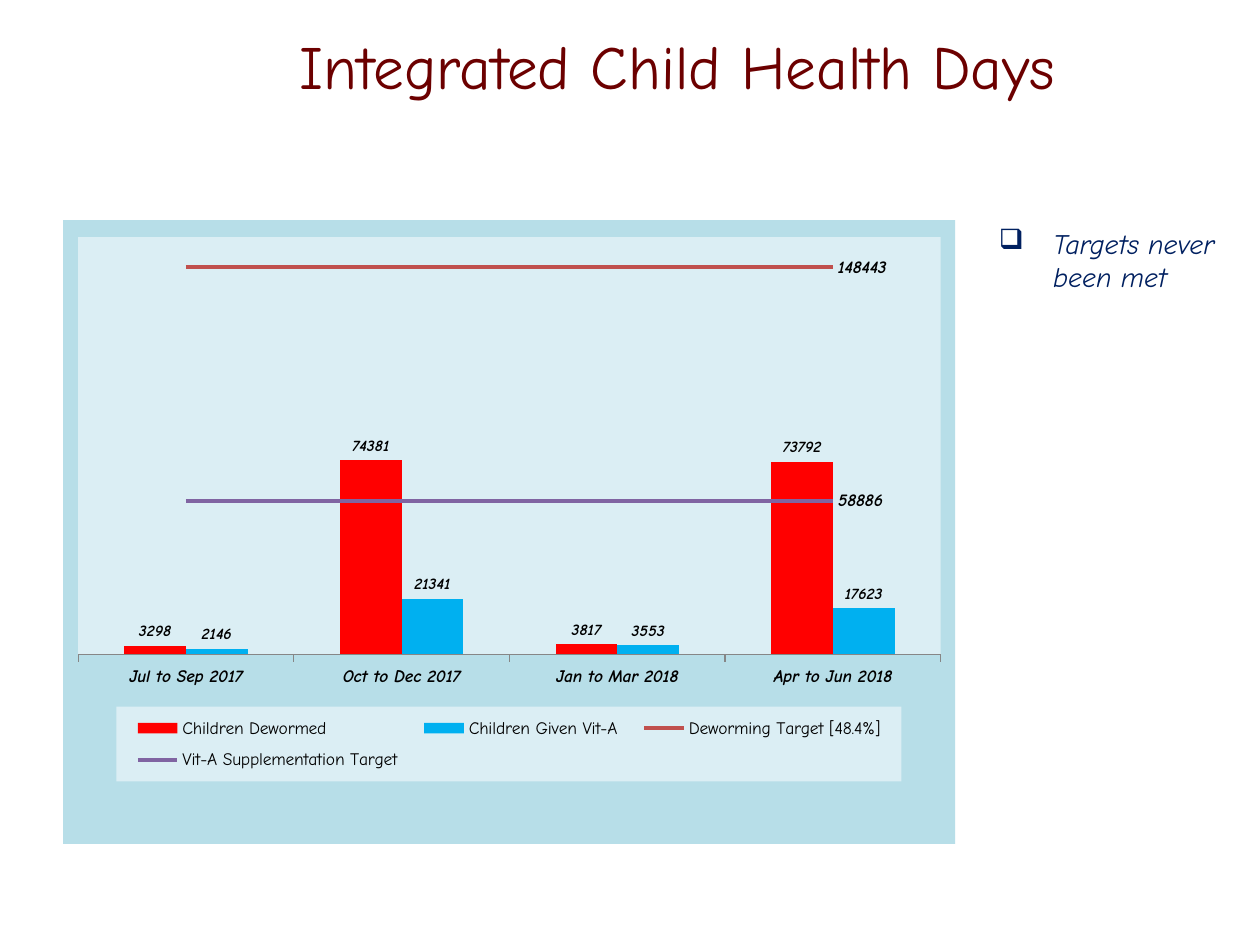
from dataclasses import dataclass

from lxml.etree import SubElement
from pptx import Presentation
from pptx.chart.data import CategoryChartData
from pptx.dml.color import RGBColor
from pptx.enum.chart import (XL_CHART_TYPE, XL_LABEL_POSITION, XL_LEGEND_POSITION,
                             XL_MARKER_STYLE, XL_TICK_LABEL_POSITION, XL_TICK_MARK)
from pptx.enum.text import MSO_ANCHOR, PP_ALIGN
from pptx.oxml import parse_xml
from pptx.oxml.ns import nsdecls, qn
from pptx.util import Inches, Pt


@dataclass(frozen=True)
class Theme:
    """Colours, typeface and type sizes of the slide."""
    font: str = "Comic Neue"
    title: str = "6C0000"
    note: str = "002060"
    ink: str = "000000"
    axis: str = "868686"
    chart: str = "B7DEE8"
    panel: str = "DBEEF4"
    title_size: float = 35
    note_size: float = 16
    chart_size: float = 10
    label_size: float = 9
    line_width: float = 2.25


THEME = Theme()
WIDTH, HEIGHT = 10, 7.5
QUARTERS = ["Jul to Sep 2017", "Oct to Dec 2017", "Jan to Mar 2018", "Apr to Jun 2018"]
COUNTS = [
    ("Children Dewormed", "FF0000", [3298, 74381, 3817, 73792]),
    ("Children Given Vit-A", "00B0F0", [2146, 21341, 3553, 17623]),
]
TARGETS = [
    ("Deworming Target [48.4%]", "C0504D", 148443),
    ("Vit-A Supplementation Target", "8064A2", 58886),
]


def place(left, top, width, height):
    """Turn shares of the slide's size into lengths."""
    return (Inches(left * WIDTH), Inches(top * HEIGHT),
            Inches(width * WIDTH), Inches(height * HEIGHT))


def style_font(font, size, colour, bold=False, italic=False):
    """Apply the theme typeface with a size, colour and style."""
    font.name = THEME.font
    font.size = Pt(size)
    font.bold = bold
    font.italic = italic
    font.color.rgb = RGBColor.from_string(colour)


def add_text(page, area, text):
    """Add a wrapping text box and return its frame and paragraph."""
    frame = page.shapes.add_textbox(*place(*area)).text_frame
    frame.word_wrap = True
    paragraph = frame.paragraphs[0]
    paragraph.text = text
    return frame, paragraph


def add_title(page, area, text):
    """Add the centred slide title."""
    frame, paragraph = add_text(page, area, text)
    frame.vertical_anchor = MSO_ANCHOR.MIDDLE
    paragraph.alignment = PP_ALIGN.CENTER
    style_font(paragraph.font, THEME.title_size, THEME.title)


def add_bullet(page, area, text):
    """Add a note with a hanging box bullet."""
    _, paragraph = add_text(page, area, text)
    properties = paragraph._p.get_or_add_pPr()
    indent = Inches(0.43)
    properties.set("marL", str(indent))
    properties.set("indent", str(-indent))
    SubElement(properties, qn("a:buChar")).set("char", "❑")
    style_font(paragraph.font, THEME.note_size, THEME.note, italic=True)


def fill_element(colour):
    """Return chart shape properties with a plain fill and no outline."""
    return parse_xml(
        f'<c:spPr {nsdecls("c", "a")}><a:solidFill><a:srgbClr val="{colour}"/>'
        '</a:solidFill><a:ln><a:noFill/></a:ln></c:spPr>')


def set_layout(element, index, shares, inner=False):
    """Position a chart part by shares of the chart's size."""
    for old in element.findall(qn("c:layout")):
        element.remove(old)
    layout = parse_xml(f'<c:layout {nsdecls("c")}><c:manualLayout/></c:layout>')
    settings = [("layoutTarget", "inner")] if inner else []
    settings += [("xMode", "edge"), ("yMode", "edge"), *zip("xywh", shares)]
    for name, value in settings:
        SubElement(layout[0], qn(f"c:{name}")).set("val", str(value))
    element.insert(index, layout)


def move_targets_to_lines(chart):
    """Move the target series from the bar plot into a line plot."""
    bars = chart._chartSpace.find(".//" + qn("c:barChart"))
    lines = parse_xml(
        f'<c:lineChart {nsdecls("c")}><c:grouping val="standard"/>'
        '<c:varyColors val="0"/><c:marker val="1"/></c:lineChart>')
    for series in bars.findall(qn("c:ser"))[len(COUNTS):]:
        for item in series.findall(qn("c:invertIfNegative")):
            series.remove(item)
        lines.find(qn("c:marker")).addprevious(series)
    for axis in bars.findall(qn("c:axId")):
        SubElement(lines, qn("c:axId")).set("val", axis.get("val"))
    bars.addnext(lines)


def style_bars(plot):
    """Colour and label the bars."""
    plot.gap_width = 150
    plot.overlap = 0
    plot.vary_by_categories = False
    for series, (_, colour, _) in zip(plot.series, COUNTS):
        series.format.fill.solid()
        series.format.fill.fore_color.rgb = RGBColor.from_string(colour)
        labels = series.data_labels
        labels.show_value = True
        labels.position = XL_LABEL_POSITION.OUTSIDE_END
        style_font(labels.font, THEME.label_size, THEME.ink, True, True)


def style_lines(plot):
    """Colour the target lines and label their last points."""
    for series, (_, colour, _) in zip(plot.series, TARGETS):
        series.smooth = False
        series.marker.style = XL_MARKER_STYLE.NONE
        series.format.line.color.rgb = RGBColor.from_string(colour)
        series.format.line.width = Pt(THEME.line_width)
        series.data_labels.show_value = False
        label = series.points[len(QUARTERS) - 1].data_label
        style_font(label.font, THEME.chart_size, THEME.ink, True, True)
        label.position = XL_LABEL_POSITION.RIGHT


def style_axes(chart):
    """Show the quarters and hide the value scale."""
    values = chart.value_axis
    values.minimum_scale, values.maximum_scale = 0, 160000
    values.has_major_gridlines = False
    values.visible = False
    quarters = chart.category_axis
    quarters.major_tick_mark = XL_TICK_MARK.OUTSIDE
    quarters.tick_label_position = XL_TICK_LABEL_POSITION.LOW
    quarters.format.line.color.rgb = RGBColor.from_string(THEME.axis)
    style_font(quarters.tick_labels.font, THEME.chart_size, THEME.ink, True, True)


def style_panels(chart):
    """Fill and position the plot area and the legend."""
    chart.has_title = False
    chart.has_legend = True
    chart.legend.position = XL_LEGEND_POSITION.BOTTOM
    chart.legend.include_in_layout = False
    style_font(chart.legend.font, THEME.chart_size, THEME.ink)
    legend = chart.legend._element
    set_layout(legend, 1, (0.06, 0.78, 0.88, 0.12))
    legend.find(qn("c:overlay")).addnext(fill_element(THEME.panel))
    space = chart._chartSpace
    area = space.find(".//" + qn("c:plotArea"))
    set_layout(area, 0, (0.017, 0.027, 0.967, 0.669), inner=True)
    area.append(fill_element(THEME.panel))
    space.find(qn("c:chart")).addnext(fill_element(THEME.chart))


def add_health_chart(page, area):
    """Add the chart of children reached against targets."""
    data = CategoryChartData()
    data.categories = QUARTERS
    for name, _, values in COUNTS:
        data.add_series(name, values)
    for name, _, target in TARGETS:
        data.add_series(name, [target] * len(QUARTERS))
    chart = page.shapes.add_chart(
        XL_CHART_TYPE.COLUMN_CLUSTERED, *place(*area), data).chart
    style_font(chart.font, THEME.chart_size, THEME.ink)
    move_targets_to_lines(chart)
    bars, lines = chart.plots
    style_bars(bars)
    style_lines(lines)
    style_axes(chart)
    style_panels(chart)


def main():
    """Build and save the slide."""
    deck = Presentation()
    deck.slide_width, deck.slide_height = Inches(WIDTH), Inches(HEIGHT)
    page = deck.slides.add_slide(deck.slide_layouts[6])
    add_title(page, (0.117, 0.017, 0.842, 0.104), "Integrated Child Health Days")
    add_health_chart(page, (0.05, 0.233, 0.708, 0.66))
    add_bullet(page, (0.783, 0.233, 0.192, 0.19), "Targets never been met")
    deck.save("out.pptx")


if __name__ == "__main__":
    main()
